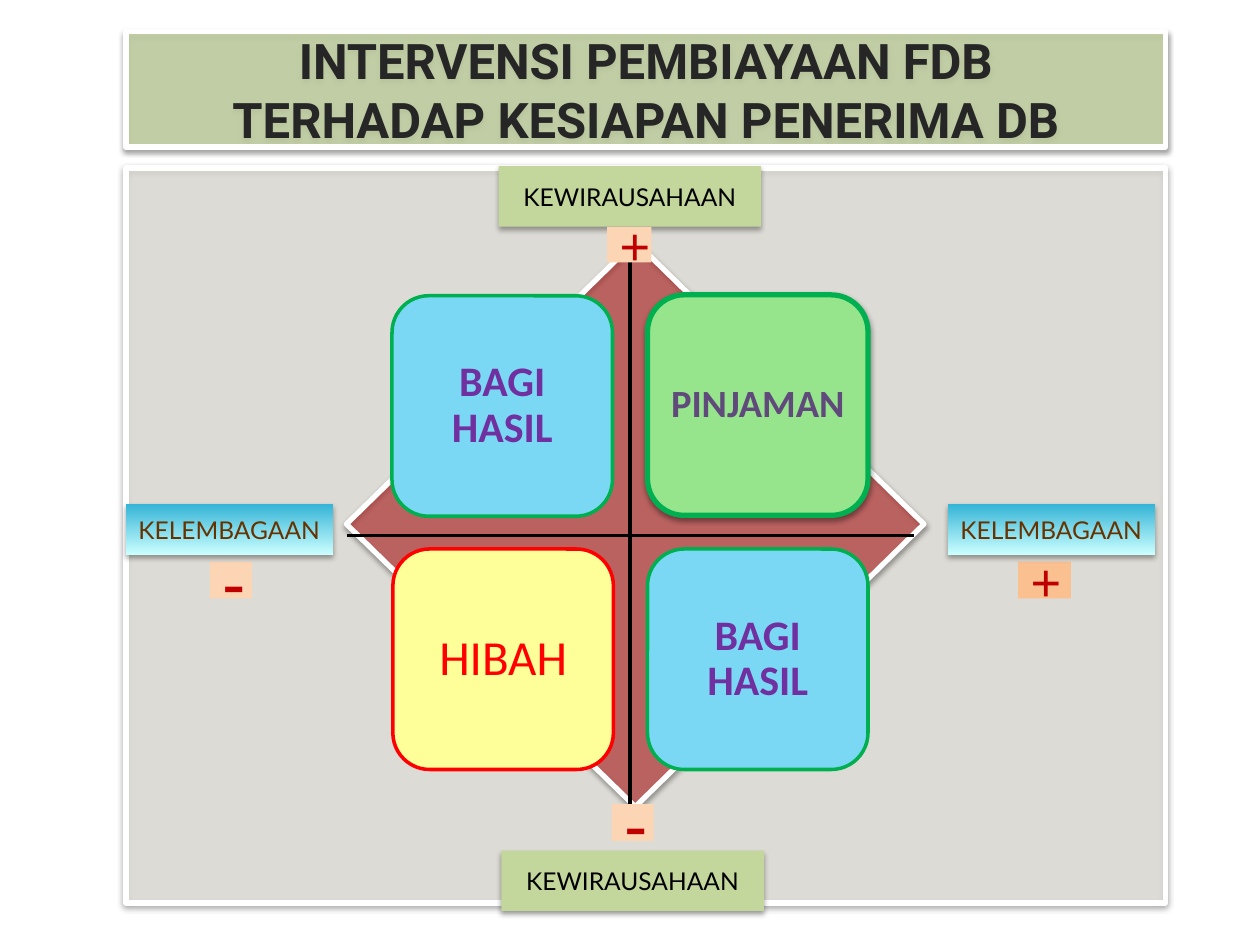
from lxml.etree import SubElement
from pptx import Presentation
from pptx.dml.color import RGBColor
from pptx.enum.shapes import MSO_CONNECTOR as CONN, MSO_SHAPE as SHAPE
from pptx.enum.text import MSO_ANCHOR as ANCHOR, MSO_AUTO_SIZE as AUTO, PP_ALIGN as ALIGN
from pptx.oxml.ns import qn
from pptx.util import Pt

WHITE, BLACK, RED = "FFFFFF", "000000", "C00000"
SAGE, PEACH, ORANGE = "C3D69B", "FCD5B5", "FAC090"
SKY, GREEN, PURPLE = "7BD8F5", "00B050", "7030A0"
PANEL_SHADOW = (38, 1.6)  # opacity in percent, distance
LABEL_SHADOW = (35, 1.8)


def rgb(value):
    return RGBColor.from_string(value)


def set_fill(sp, color, alpha=None):
    sp.fill.solid()
    sp.fill.fore_color.rgb = rgb(color)
    if alpha:
        clr = sp.fill._xPr.find(qn("a:solidFill"))[0]
        SubElement(clr, qn("a:alpha"), val=str(alpha * 1000))


def set_line(sp, color=None, width=0):
    if color:
        sp.line.color.rgb = rgb(color)
        sp.line.width = Pt(width)
    else:
        sp.line.fill.background()


def set_shadow(sp, shadow=None):
    sp.shadow.inherit = False
    if shadow:
        opacity, dist = shadow
        effects = sp._element.spPr.find(qn("a:effectLst"))
        outer = SubElement(effects, qn("a:outerShdw"), blurRad=str(Pt(3.1)),
                           dist=str(Pt(dist)), dir="5400000", rotWithShape="0")
        clr = SubElement(outer, qn("a:srgbClr"), val=BLACK)
        SubElement(clr, qn("a:alpha"), val=str(opacity * 1000))


def set_text(sp, text, font, size, color, bold=False, align=ALIGN.CENTER, wrap=False):
    tf = sp.text_frame
    tf.text = text
    tf.word_wrap = wrap
    tf.auto_size = AUTO.NONE
    tf.vertical_anchor = ANCHOR.MIDDLE
    for p in tf.paragraphs:
        p.alignment = align
        for r in p.runs:
            r.font.name, r.font.size, r.font.bold = font, Pt(size), bold
            r.font.color.rgb = rgb(color)


def add_box(s, kind, box, fill, alpha=None, line=(), shadow=None):
    sp = s.shapes.add_shape(kind, *map(Pt, box))
    set_fill(sp, fill, alpha)
    set_line(sp, *line)
    set_shadow(sp, shadow)
    return sp


def add_title(s, text):
    sp = s.shapes.title
    sp.left, sp.top, sp.width, sp.height = Pt(72), Pt(18), Pt(594), Pt(66)
    set_fill(sp, SAGE, 68)
    set_line(sp, WHITE, 3)
    set_shadow(sp, PANEL_SHADOW)
    set_text(sp, text, "Roboto", 28, "262626", bold=True)


def add_quadrant(s, left, top, text, size, color, fill, line, bold=True, inset=7.2, shadow=None):
    sp = add_box(s, SHAPE.ROUNDED_RECTANGLE, (left, top, 126, 126), fill,
                 line=line, shadow=shadow)
    set_text(sp, text, "Calibri", size, color, bold, wrap=True)
    tf = sp.text_frame
    tf.margin_left = tf.margin_right = tf.margin_top = tf.margin_bottom = Pt(inset)
    tf.paragraphs[0].line_spacing = 0.9


def add_axis(s, x1, y1, x2, y2):
    line = s.shapes.add_connector(CONN.STRAIGHT, Pt(x1), Pt(y1), Pt(x2), Pt(y2))
    set_line(line, BLACK, 2.25)
    SubElement(line._element.spPr, qn("a:effectLst"))


def add_sign(s, box, sign, fill=PEACH):
    sp = add_box(s, SHAPE.RECTANGLE, box, fill)
    set_text(sp, sign, "Arial", 30 if sign == "+" else 40, RED, align=ALIGN.LEFT)


def add_vertical_label(s, left, top):
    sp = add_box(s, SHAPE.RECTANGLE, (left, top, 150, 34.5), SAGE, shadow=LABEL_SHADOW)
    set_text(sp, "KEWIRAUSAHAAN", "Lato", 14, BLACK)


def add_horizontal_label(s, left):
    sp = add_box(s, SHAPE.RECTANGLE, (left, 288, 118.3, 29.2), SKY, shadow=LABEL_SHADOW)
    sp.fill.gradient()
    sp.fill.gradient_angle = 90
    for stop, color in zip(sp.fill.gradient_stops, ("CCFFFF", "34B4D6")):
        stop.color.rgb = rgb(color)
    set_text(sp, "KELEMBAGAAN", "Lato", 14, "663300", align=ALIGN.LEFT)


def main():
    prs = Presentation()
    prs.slide_width, prs.slide_height = Pt(720), Pt(540)
    s = prs.slides.add_slide(prs.slide_layouts[5])
    add_title(s, "INTERVENSI PEMBIAYAAN FDB\nTERHADAP KESIAPAN PENERIMA DB")

    # Background panel and diamond
    frame = {"line": (WHITE, 3), "shadow": PANEL_SHADOW}
    add_box(s, SHAPE.RECTANGLE, (72, 96, 594, 420), "EEECE1", 54, **frame)
    add_box(s, SHAPE.DIAMOND, (198, 138, 330, 323), "C00000", 45, **frame)

    # Quadrants
    add_quadrant(s, 224, 169, "BAGI HASIL", 24, PURPLE, SKY, (GREEN, 2))
    add_quadrant(s, 370, 168.5, "PINJAMAN", 22, "604A7B", "96E48C", (GREEN, 3),
                 inset=6.5, shadow=PANEL_SHADOW)
    add_quadrant(s, 224.5, 313.7, "HIBAH", 28, "FF0000", "FFFF99", ("FF0000", 2),
                 bold=False, inset=8.6)
    add_quadrant(s, 370, 313.7, "BAGI HASIL", 24, PURPLE, SKY, (GREEN, 2))

    # Axes
    add_axis(s, 198, 306, 522, 306)
    add_axis(s, 360, 144, 360, 468)

    # Axis labels and signs
    add_vertical_label(s, 285, 95)
    add_sign(s, (347, 129.6, 25.2, 20.4), "+")
    add_sign(s, (581.8, 321, 30.2, 21), "+", ORANGE)
    add_sign(s, (120, 321, 24, 21), "-")
    add_sign(s, (349.5, 459.5, 24, 21), "-")
    add_horizontal_label(s, 541.7)
    add_vertical_label(s, 286.5, 486)
    add_horizontal_label(s, 72)

    prs.save("out.pptx")


if __name__ == "__main__":
    main()
